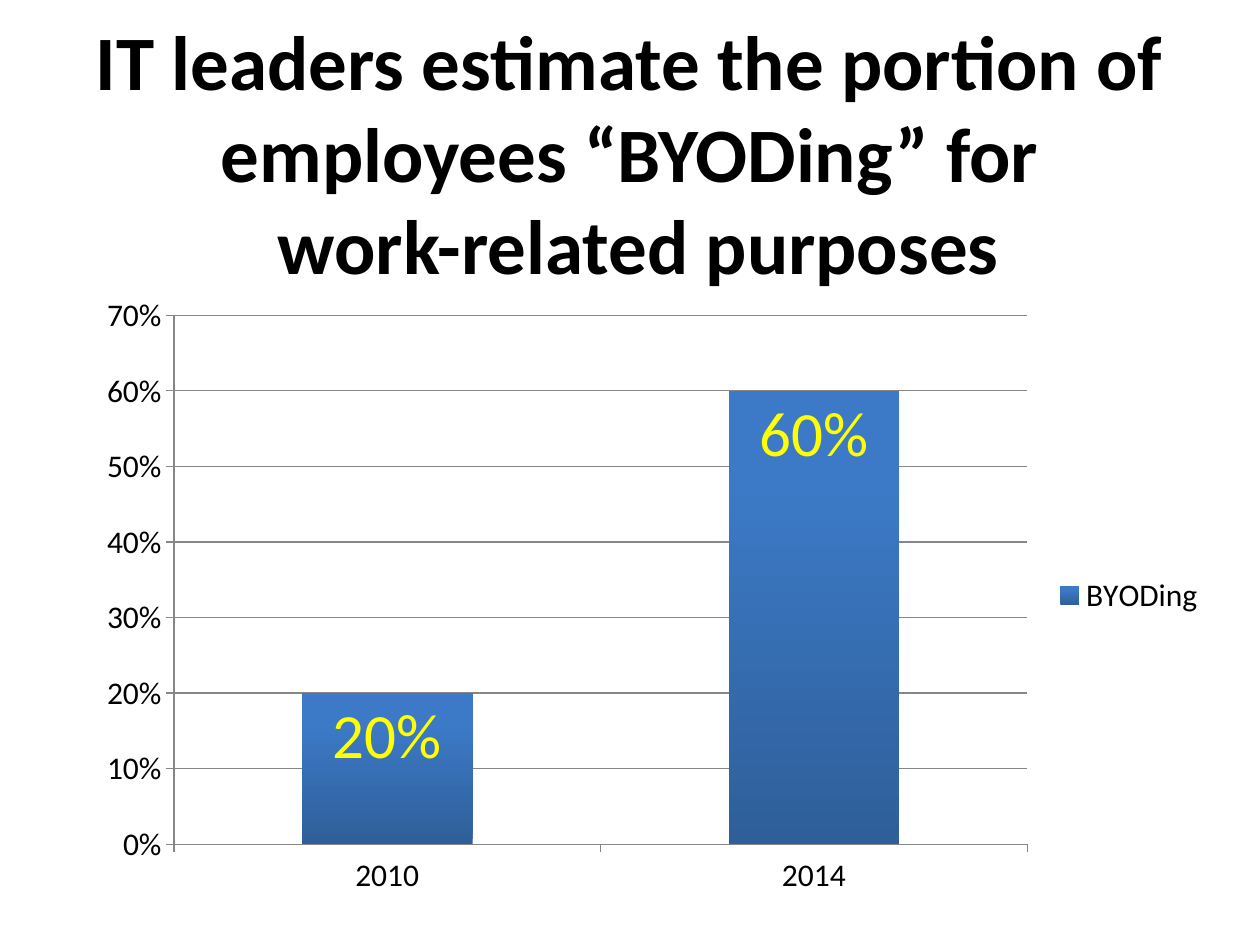
from pptx import Presentation
from pptx.chart.data import CategoryChartData
from pptx.dml.color import RGBColor
from pptx.enum.chart import XL_CHART_TYPE, XL_LABEL_POSITION, XL_LEGEND_POSITION, XL_TICK_MARK
from pptx.enum.text import MSO_ANCHOR, MSO_AUTO_SIZE, PP_ALIGN
from pptx.util import Cm, Pt

FONT = "Calibri"
BLACK, YELLOW, AXIS_GREY = "000000", "FFFF00", "868686"
BAR_BOTTOM, BAR_TOP = "2E5F99", "3C7AC7"


def color(hex_string):
    return RGBColor.from_string(hex_string)


def format_font(font, size, hex_color=BLACK, bold=False):
    font.name = FONT
    font.size = Pt(size)
    font.bold = bold
    font.color.rgb = color(hex_color)


def write_text(frame, text, align=PP_ALIGN.CENTER, **font_format):
    """Fill the frame with one paragraph; a vertical tab breaks the line."""
    frame.text = text
    para = frame.paragraphs[0]
    para.alignment = align
    for span in para.runs:
        format_font(span.font, **font_format)


def place_title(page, left, top, width, height):
    title = page.shapes.title
    title.left, title.top, title.width, title.height = left, top, width, height
    frame = title.text_frame
    frame.word_wrap = True
    frame.auto_size = MSO_AUTO_SIZE.NONE
    frame.vertical_anchor = MSO_ANCHOR.MIDDLE
    write_text(frame, "IT leaders estimate the portion of employees “BYODing” for\v work-related purposes",
               size=44, bold=True)


def format_axes(chart):
    values = chart.value_axis
    values.minimum_scale, values.maximum_scale, values.major_unit = 0, 0.7, 0.1
    values.tick_labels.number_format = "0%"
    values.tick_labels.number_format_is_linked = False
    values.has_major_gridlines = True
    for axis in (values, chart.category_axis):
        axis.major_tick_mark = XL_TICK_MARK.OUTSIDE
        axis.minor_tick_mark = XL_TICK_MARK.NONE
    for part in (values, chart.category_axis, values.major_gridlines):
        part.format.line.color.rgb = color(AXIS_GREY)
        part.format.line.width = Pt(0.75)


def format_bars(plot):
    plot.gap_width = 150
    plot.vary_by_categories = False
    fill = plot.series[0].format.fill
    fill.gradient()
    fill.gradient_angle = 90
    for stop, hex_color, position in zip(fill.gradient_stops, (BAR_BOTTOM, BAR_TOP), (0, 0.8)):
        stop.color.rgb = color(hex_color)
        stop.position = position
    labels = plot.series[0].data_labels
    labels.show_value = True
    labels.position = XL_LABEL_POSITION.INSIDE_END
    labels.number_format = "0%"
    labels.number_format_is_linked = False
    format_font(labels.font, 36, YELLOW)


def place_chart(page, left, top, width, height):
    data = CategoryChartData(number_format="0%")
    data.categories = ["2010", "2014"]
    data.add_series("BYODing", (0.2, 0.6))
    chart = page.shapes.add_chart(XL_CHART_TYPE.COLUMN_CLUSTERED, left, top, width, height, data).chart
    format_font(chart.font, 18)
    chart.has_title = False
    chart.has_legend = True
    chart.legend.position = XL_LEGEND_POSITION.RIGHT
    chart.legend.include_in_layout = False
    format_axes(chart)
    format_bars(chart.plots[0])


def main():
    deck = Presentation()
    deck.slide_width, deck.slide_height = Cm(25.4), Cm(19.05)
    page = deck.slides.add_slide(deck.slide_layouts[5])
    place_title(page, Cm(0.28), Cm(1.47), Cm(24.84), Cm(3.18))
    place_chart(page, Cm(1.7), Cm(5.72), Cm(22.86), Cm(12.57))
    deck.save("out.pptx")


if __name__ == "__main__":
    main()
